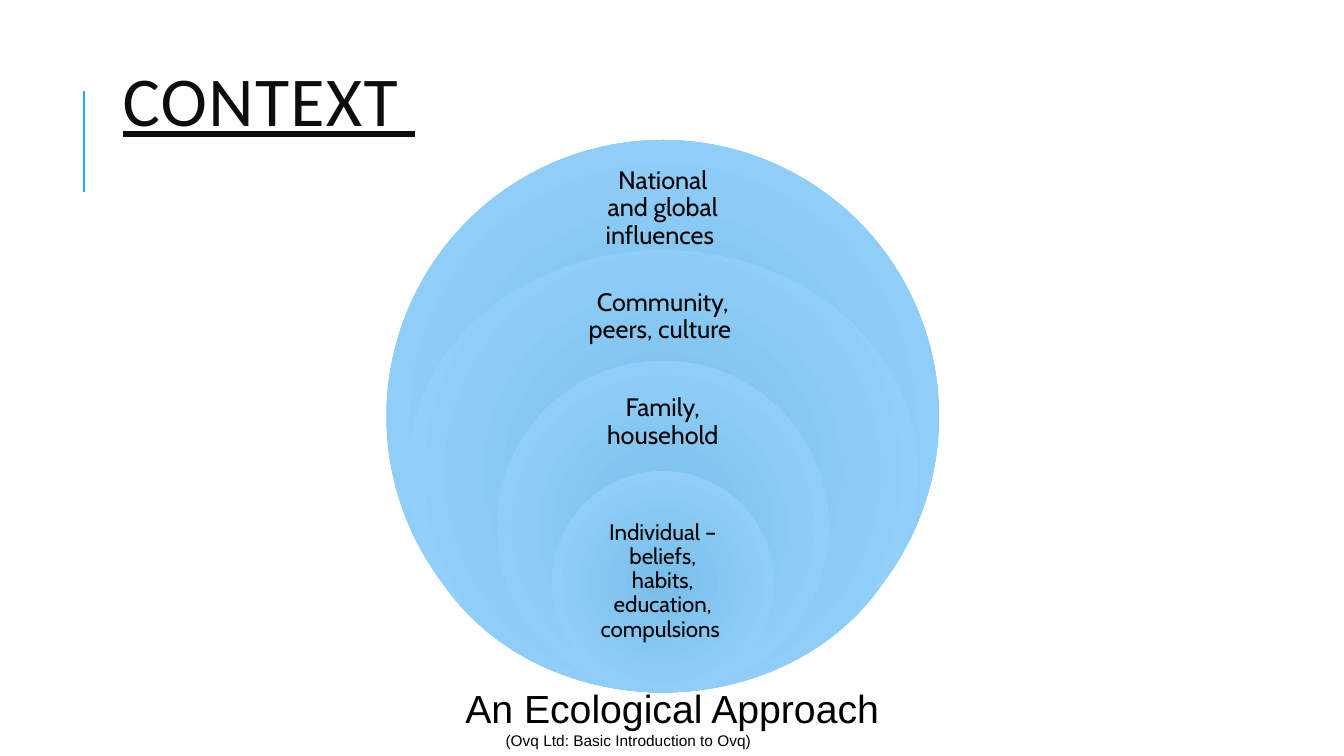
from lxml.etree import SubElement
from pptx import Presentation
from pptx.dml.color import RGBColor
from pptx.enum.shapes import MSO_CONNECTOR, MSO_SHAPE
from pptx.enum.text import MSO_ANCHOR, MSO_AUTO_SIZE, PP_ALIGN
from pptx.oxml.ns import qn
from pptx.util import Pt

BLACK = RGBColor(0, 0, 0)
TITLE_INK = RGBColor(0x0D, 0x0D, 0x0D)
ACCENT = RGBColor(0x1C, 0xAD, 0xE4)
RING_INNER = RGBColor(0x78, 0xBE, 0xE9)
RING_OUTER = RGBColor(0x9A, 0xD5, 0xFF)

TITLE = "CONTEXT "
CAPTION = "An Ecological Approach "
CREDIT = "(Ovq Ltd: Basic Introduction to Ovq)"

# label, ring width, label top, label width, label height, font size, inset
RINGS = [
    ("National and global influences ", 394.6, 119.5, 110.2, 59, 18, 10),
    ("Community, peers, culture ", 364.3, 198, 127.4, 56.9, 18, 10),
    ("Family, household", 236.8, 275, 110.2, 53.3, 18, 10),
    ("Individual – beliefs, habits, education, compulsions ", 157.8, 375.8, 111.6, 79.2, 16, 8.9),
]
CENTER_X = 473.4
RINGS_BOTTOM = 494.6
OUTER_HEIGHT = 394.6
HEIGHT_STEP = 0.2


def add_text(slide, box, anchor, inset=None):
    """Add an empty wrapping text box and return its text frame."""
    tf = slide.shapes.add_textbox(*map(Pt, box)).text_frame
    tf.word_wrap = True
    tf.vertical_anchor = anchor
    if inset is not None:
        for side in ("left", "top", "right", "bottom"):
            setattr(tf, f"margin_{side}", Pt(inset))
    return tf


def write(p, text, font, paragraph=None):
    for name, value in (paragraph or {}).items():
        setattr(p, name, value)
    r = p.add_run()
    r.text = text
    color = font.pop("color", BLACK)
    for name, value in font.items():
        setattr(r.font, name, value)
    r.font.color.rgb = color
    return r


def radial_fill(sp):
    """Shade a shape from its center outwards."""
    sp.fill.gradient()
    for stop, color in zip(sp.fill.gradient_stops, (RING_INNER, RING_OUTER)):
        stop.color.rgb = color
    grad = sp.fill._xPr.find(qn("a:gradFill"))
    grad.remove(grad.find(qn("a:lin")))
    radial = SubElement(grad, qn("a:path"), {"path": "circle"})
    SubElement(radial, qn("a:fillToRect"), {side: "100000" for side in "ltrb"})


def add_ring(slide, index, ring):
    label, width, label_top, label_width, label_height, size, inset = ring
    height = OUTER_HEIGHT * (1 - HEIGHT_STEP * index)
    sp = slide.shapes.add_shape(
        MSO_SHAPE.OVAL, Pt(CENTER_X - width / 2), Pt(RINGS_BOTTOM - height), Pt(width), Pt(height))
    sp.shadow.inherit = False
    sp.line.fill.background()
    radial_fill(sp)
    box = (CENTER_X - label_width / 2, label_top, label_width, label_height)
    tf = add_text(slide, box, MSO_ANCHOR.MIDDLE, inset)
    write(tf.paragraphs[0], label, {"name": "Cabin", "size": Pt(size)},
          {"alignment": PP_ALIGN.CENTER, "line_spacing": 0.9, "space_after": Pt(size * 0.35)})


def main():
    prs = Presentation()
    prs.slide_width, prs.slide_height = Pt(960), Pt(540)
    slide = prs.slides.add_slide(prs.slide_layouts[6])

    rule = slide.shapes.add_connector(MSO_CONNECTOR.STRAIGHT, Pt(60), Pt(136.8), Pt(60), Pt(64.8))
    rule.line.color.rgb = ACCENT
    rule.line.width = Pt(1.5)
    SubElement(rule._element.spPr, qn("a:effectLst"))

    tf = add_text(slide, (80.6, 46.1, 765.4, 60.5), MSO_ANCHOR.MIDDLE)
    r = write(tf.paragraphs[0], TITLE,
              {"name": "Calibri", "size": Pt(50), "underline": True, "color": TITLE_INK},
              {"line_spacing": 0.8})
    r.font._element.set("spc", "100")

    for index, ring in enumerate(RINGS):
        add_ring(slide, index, ring)

    tf = add_text(slide, (162.7, 485.3, 572.4, 54.7), MSO_ANCHOR.TOP)
    tf.auto_size = MSO_AUTO_SIZE.SHAPE_TO_FIT_TEXT
    centered = {"alignment": PP_ALIGN.CENTER}
    p = tf.paragraphs[0]
    write(p, CAPTION, {"name": "Arial", "size": Pt(28)}, centered)
    p._p.get_or_add_pPr().set("marL", str(Pt(70)))
    write(tf.add_paragraph(), CREDIT, {"name": "Arial", "size": Pt(11)}, centered)

    prs.save("out.pptx")


if __name__ == "__main__":
    main()
